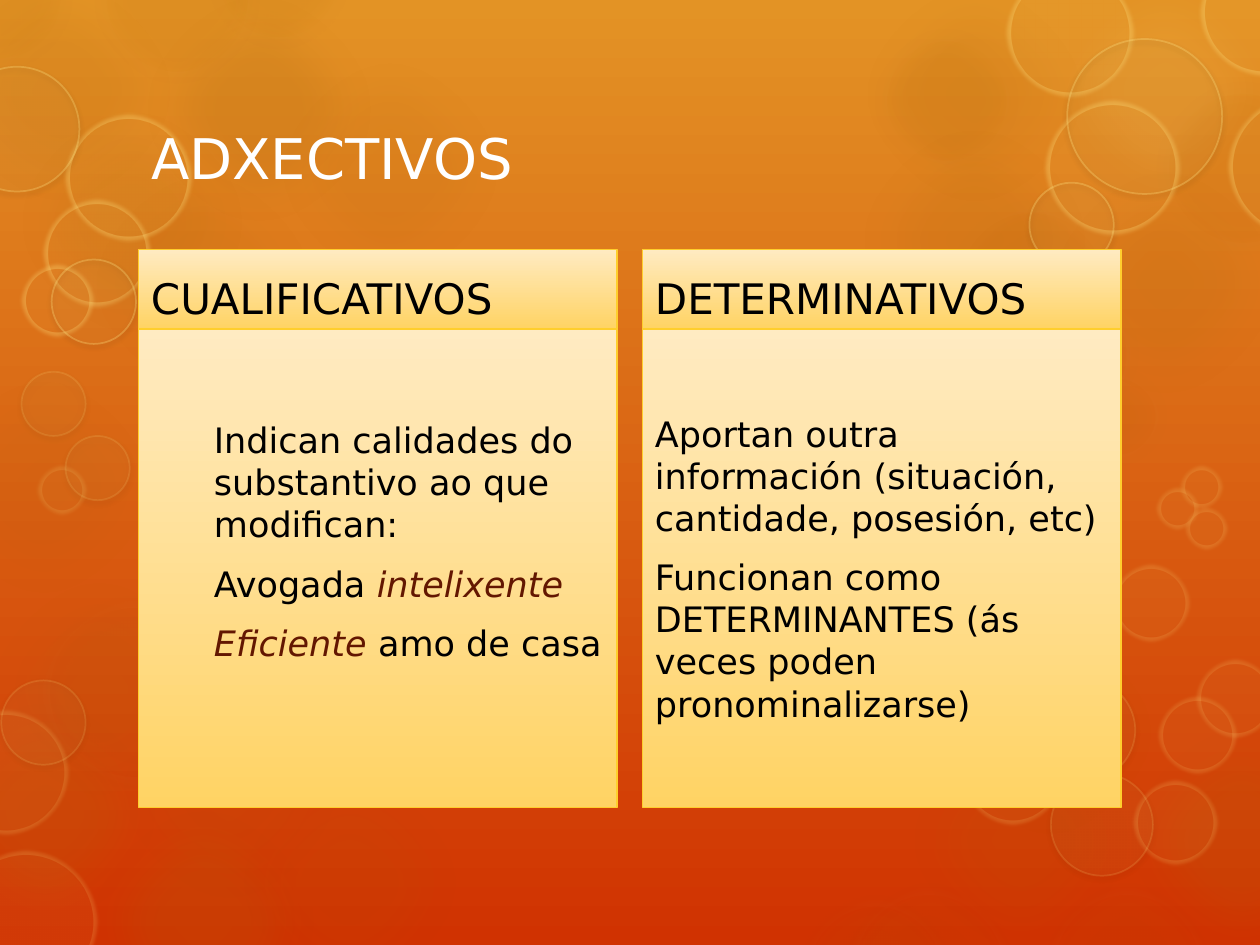
from lxml import etree
from pptx import Presentation
from pptx.dml.color import RGBColor
from pptx.enum.shapes import MSO_SHAPE
from pptx.enum.text import MSO_ANCHOR, PP_ALIGN
from pptx.oxml.ns import qn
from pptx.util import Inches, Pt

OVAL, RECT = MSO_SHAPE.OVAL, MSO_SHAPE.RECTANGLE
MIDDLE, BOTTOM = MSO_ANCHOR.MIDDLE, MSO_ANCHOR.BOTTOM
LEFT = PP_ALIGN.LEFT
FONT = "DejaVu Sans"
BLACK, WHITE, MAROON = "000000", "FFFFFF", "631701"
OCHRE, SAND, YELLOW = "AE6D11", "F1BD74", "FFE281"


def paint(fill, *colours):
    if len(colours) == 1:
        fill.solid()
        fill.fore_color.rgb = RGBColor.from_string(colours[0])
        return
    fill.gradient()
    fill.gradient_angle = 270
    for stop, colour in zip(fill.gradient_stops, colours):
        stop.color.rgb = RGBColor.from_string(colour)


def write(shape, paragraphs, size, colour, anchor, before=0, after=0, indent=0, bottom=0.05):
    frame = shape.text_frame
    frame_format = {"word_wrap": True, "vertical_anchor": anchor, "margin_bottom": Inches(bottom)}
    for name, value in frame_format.items():
        setattr(frame, name, value)
    for index, runs in enumerate(paragraphs):
        paragraph = frame.paragraphs[0] if index == 0 else frame.add_paragraph()
        paragraph_format = {
            "alignment": LEFT,
            "space_before": Pt(before if index else 0),
            "space_after": Pt(after),
        }
        for name, value in paragraph_format.items():
            setattr(paragraph, name, value)
        if indent:
            properties = paragraph._p.get_or_add_pPr()
            properties.set("marL", str(Inches(indent)))
            properties.set("indent", "0")
        for text, emphasised in runs:
            run = paragraph.add_run()
            run.text = text
            run_format = {"name": FONT, "size": Pt(size), "italic": emphasised}
            for name, value in run_format.items():
                setattr(run.font, name, value)
            run.font.color.rgb = RGBColor.from_string(MAROON if emphasised else colour)


prs = Presentation()
prs.slide_width, prs.slide_height = Inches(10), Inches(7.5)
slide = prs.slides.add_slide(prs.slide_layouts[6])
paint(slide.background.fill, "E39325", "D03201")

STYLES = {
    "haze": {"fill": OCHRE, "soft": 25},
    "gleam": {"fill": YELLOW, "soft": 25},
    "glow": {"fill": OCHRE, "line": SAND, "width": 14, "soft": 12},
    "bubble": {"fill": YELLOW, "line": YELLOW, "width": 5, "soft": 2.5},
    "ring": {"fill": YELLOW, "line": YELLOW, "width": 1, "soft": 0},
}
BOKEH = [
    ("haze", 2.09, 0, [
        (-0.26, 4.42, 8), (0.57, 1.2, 10), (2.05, 0.31, 10), (0.57, 6.27, 16),
        (-0.56, -0.32, 14), (1.01, -0.18, 20), (0, 0.72, 15)]),
    ("gleam", 2.09, 0, [(8.2, -0.32, 10)]),
    ("haze", 2.09, 0, [
        (6.69, -0.3, 10), (8.2, 1.2, 15), (8.81, 5.62, 16), (7.29, 4.77, 5),
        (-0.69, 5.41, 16), (0.77, 5.24, 8), (6.69, 0.86, 15), (7.06, 5.62, 10)]),
    ("glow", 1.37, 6, [(9.18, 0.65, 10)]),
    ("glow", 1.14, 6, [(6.94, 0.23, 10), (7.89, 2.24, 10), (1.64, -0.75, 10), (-0.57, -0.58, 10)]),
    ("glow", 1.33, 6, [(7.52, 1.59, 10)]),
    ("glow", 0.79, 6, [(8.47, 2.91, 10)]),
    ("glow", 1.31, 6, [(0.75, -0.65, 10)]),
    ("glow", 1.53, 4, [(0.3, 4.73, 6)]),
    ("glow", 1.25, 4, [(6.32, 7.1, 6)]),
    ("glow", 1.37, 4, [(6.69, 7.01, 6)]),
    ("glow", 1.33, 4, [(8.28, 7.01, 6)]),
    ("ring", 0.67, 15, [(0.01, 5.4, 5)]),
    ("bubble", 1.13, 15, [(-0.36, 6.75, 5)]),
    ("bubble", 0.98, 15, [(-0.44, 5.64, 5)]),
    ("ring", 0.99, 30, [(-0.36, 0.53, 5)]),
    ("bubble", 1, 30, [(0.52, 0.91, 5), (7.99, -0.24, 5), (9.53, -0.4, 5)]),
    ("bubble", 0.84, 30, [(0.35, 1.59, 5)]),
    ("ring", 0.67, 30, [(0.41, 2.06, 5), (8.17, 1.45, 5)]),
    ("bubble", 0.57, 30, [(0.17, 2.1, 5)]),
    ("ring", 1.23, 30, [(8.47, 0.31, 5)]),
    ("bubble", 1.12, 30, [(9.75, 0.76, 5)]),
    ("bubble", 1.06, 30, [(8.3, 0.8, 5)]),
    ("ring", 0.81, 15, [(8.34, 6.14, 5), (8.2, 5.39, 5)]),
    ("bubble", 0.81, 15, [(7.63, 5.73, 5)]),
    ("bubble", 0.66, 15, [(9, 6.2, 5)]),
    ("bubble", 0.61, 15, [(8.83, 4.48, 5), (9.2, 5.53, 5), (9.5, 5.24, 5)]),
    ("haze", 2.09, 0, [(1.73, 5.96, 8)]),
    ("bubble", 0.33, 15, [(9.37, 3.7, 5), (9.18, 3.87, 5), (9.41, 4.03, 5)]),
    ("ring", 0.51, 15, [(0.17, 2.95, 5), (0.52, 3.46, 5)]),
    ("bubble", 0.38, 15, [(0.3, 3.7, 5)]),
    ("haze", 2.09, 0, [(-0.7, 2.82, 8)]),
    ("haze", 1.33, 0, [(6.75, 2.62, 10)]),
]

for style_name, diameter, line_alpha, circles in BOKEH:
    style = STYLES[style_name]
    for left, top, fill_alpha in circles:
        circle = slide.shapes.add_shape(
            OVAL, Inches(left), Inches(top), Inches(diameter), Inches(diameter))
        circle.shadow.inherit = False
        paint(circle.fill, style["fill"])
        if "line" in style:
            paint(circle.line.fill, style["line"])
            circle.line.width = Pt(style["width"])
        else:
            circle.line.fill.background()
        properties = circle._element.spPr
        for place, alpha in (("a:solidFill", fill_alpha), ("a:ln/a:solidFill", line_alpha)):
            for colour in properties.xpath(place + "/a:srgbClr"):
                etree.SubElement(colour, qn("a:alpha"), val=str(alpha * 1000))
        effects = properties.find(qn("a:effectLst"))
        if style["soft"]:
            etree.SubElement(effects, qn("a:softEdge"), rad=str(Pt(style["soft"])))
        else:
            shadow = etree.SubElement(effects, qn("a:outerShdw"), blurRad=str(Pt(3.1)),
                                      dist=str(Pt(1.6)), dir="5400000", rotWithShape="0")
            shade = etree.SubElement(shadow, qn("a:srgbClr"), val=BLACK)
            etree.SubElement(shade, qn("a:alpha"), val="38000")

title = slide.shapes.add_textbox(Inches(1.1), Inches(0.74), Inches(7.79), Inches(1.01))
write(title, [[("ADXECTIVOS", False)]], 32, WHITE, MIDDLE)

COLUMNS = [
    ("CUALIFICATIVOS", 0.5, 0.48, [
        [("Indican calidades do substantivo ao que modifican:", False)],
        [("Avogada ", False), ("intelixente", True)],
        [("Eficiente ", True), ("amo de casa", False)],
    ]),
    ("DETERMINATIVOS", 0, 0.05, [
        [("Aportan outra información (situación, cantidade, posesión, etc)", False)],
        [("Funcionan como DETERMINANTES (ás veces poden pronominalizarse)", False)],
    ]),
]
for column, (heading, indent, bottom, explanation) in enumerate(COLUMNS):
    cells = [
        (1.98, 0.63, [[(heading, False)]], 24, BOTTOM, 0, 0.05),
        (2.61, 3.8, explanation, 20, MIDDLE, indent, bottom),
    ]
    for top, height, paragraphs, size, anchor, margin, inset in cells:
        card = slide.shapes.add_shape(
            RECT, Inches(1.1 + 4 * column), Inches(top), Inches(3.8), Inches(height))
        card.shadow.inherit = False
        paint(card.fill, "FFEBC2", "FFD364")
        paint(card.line.fill, "FFCE2D")
        card.line.width = Pt(1)
        write(card, paragraphs, size, BLACK, anchor, 4, 6, margin, inset)

prs.save("out.pptx")
